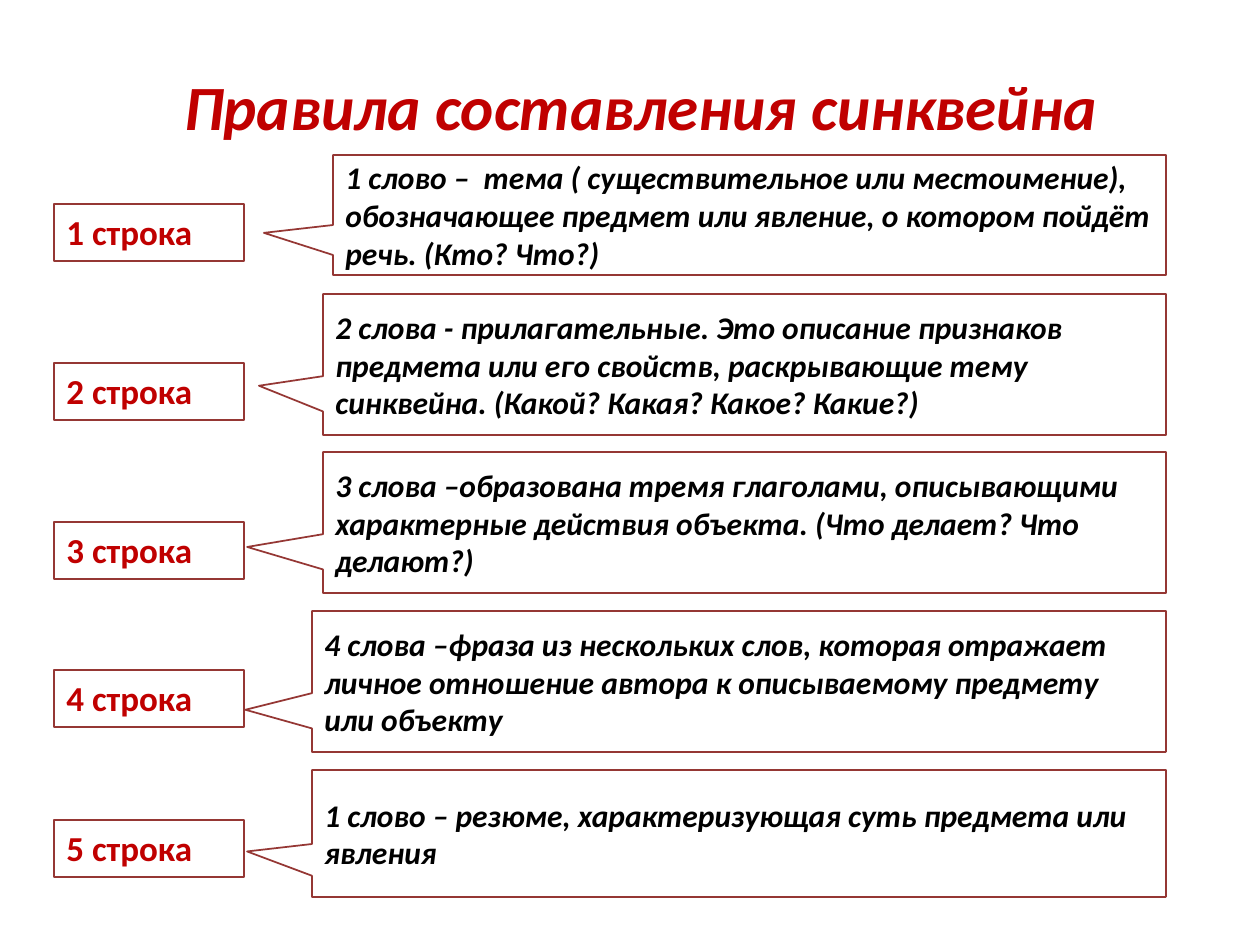
import pptx
import pptx.util
import pptx.dml.color
import pptx.enum.shapes
import pptx.enum.text

PX = 914400 // 126
RED, BORDER, WHITE, BLACK = "C00000", "953734", "FFFFFF", "000000"
CALLOUT_RIGHT = 1166
LABEL_LEFT, LABEL_WIDTH, LABEL_HEIGHT = 54, 190, 57

# label top, callout left, callout top, callout height, pointer x and y, text
ROWS = [
    (204, 333, 155, 120, -0.583, 0.149,
     "1 слово –  тема ( существительное или местоимение), обозначающее "
     "предмет или явление, о котором пойдёт речь. (Кто? Что?)"),
    (363, 323, 294, 141, -0.576, 0.151,
     "2 слова - прилагательные. Это описание признаков предмета или его "
     "свойств, раскрывающие тему синквейна. (Какой? Какая? Какое? Какие?)"),
    (522, 323, 452, 141, -0.59, 0.174,
     "3 слова –образована тремя глаголами, описывающими характерные "
     "действия объекта. (Что делает? Что делают?)"),
    (670, 312, 611, 141, -0.578, 0.201,
     "4 слова –фраза из нескольких слов, которая отражает личное отношение "
     "автора к описываемому предмету или объекту"),
    (820, 312, 770, 127, -0.576, 0.142,
     "1 слово – резюме, характеризующая суть предмета или явления"),
]


def color(value):
    return pptx.dml.color.RGBColor.from_string(value)


def box(*lengths):
    return [length * PX for length in lengths]


def write(shape, text, *, size, ink, italic=False, centered=False, middle=True):
    anchors = pptx.enum.text.MSO_ANCHOR
    aligns = pptx.enum.text.PP_ALIGN
    frame = shape.text_frame
    frame.word_wrap = True
    frame.vertical_anchor = anchors.MIDDLE if middle else anchors.TOP
    paragraph = frame.paragraphs[0]
    paragraph.alignment = aligns.CENTER if centered else aligns.LEFT
    run = paragraph.add_run()
    run.text = text
    font = run.font
    font.name = "Calibri"
    font.size = pptx.util.Pt(size)
    font.bold = True
    font.italic = italic
    font.color.rgb = color(ink)


def add_outlined(slide, kind, *lengths):
    shape = slide.shapes.add_shape(kind, *box(*lengths))
    shape.shadow.inherit = False
    shape.fill.solid()
    shape.fill.fore_color.rgb = color(WHITE)
    shape.line.color.rgb = color(BORDER)
    shape.line.width = pptx.util.Pt(1)
    return shape


def add_title(slide, text):
    title = slide.shapes.add_textbox(*box(74, 26, 1134, 158))
    write(title, text, size=36, ink=RED, italic=True, centered=True)


def add_label(slide, top, text):
    kind = pptx.enum.shapes.MSO_SHAPE.RECTANGLE
    label = add_outlined(slide, kind, LABEL_LEFT, top, LABEL_WIDTH, LABEL_HEIGHT)
    write(label, text, size=20, ink=RED, middle=False)


def add_callout(slide, left, top, height, pointer, text):
    kind = pptx.enum.shapes.MSO_SHAPE.RECTANGULAR_CALLOUT
    callout = add_outlined(slide, kind, left, top, CALLOUT_RIGHT - left, height)
    callout.adjustments[0], callout.adjustments[1] = pointer
    write(callout, text, size=18, ink=BLACK, italic=True)


def main():
    presentation = pptx.Presentation()
    presentation.slide_width, presentation.slide_height = box(1260, 945)
    slide = presentation.slides.add_slide(presentation.slide_layouts[6])

    add_title(slide, "Правила составления синквейна")

    # One label and one callout for each line of the poem
    for number, row in enumerate(ROWS, 1):
        label_top, left, top, height, pointer_x, pointer_y, text = row
        add_callout(slide, left, top, height, (pointer_x, pointer_y), text)
        add_label(slide, label_top, f"{number} строка")

    presentation.save("out.pptx")


if __name__ == "__main__":
    main()
